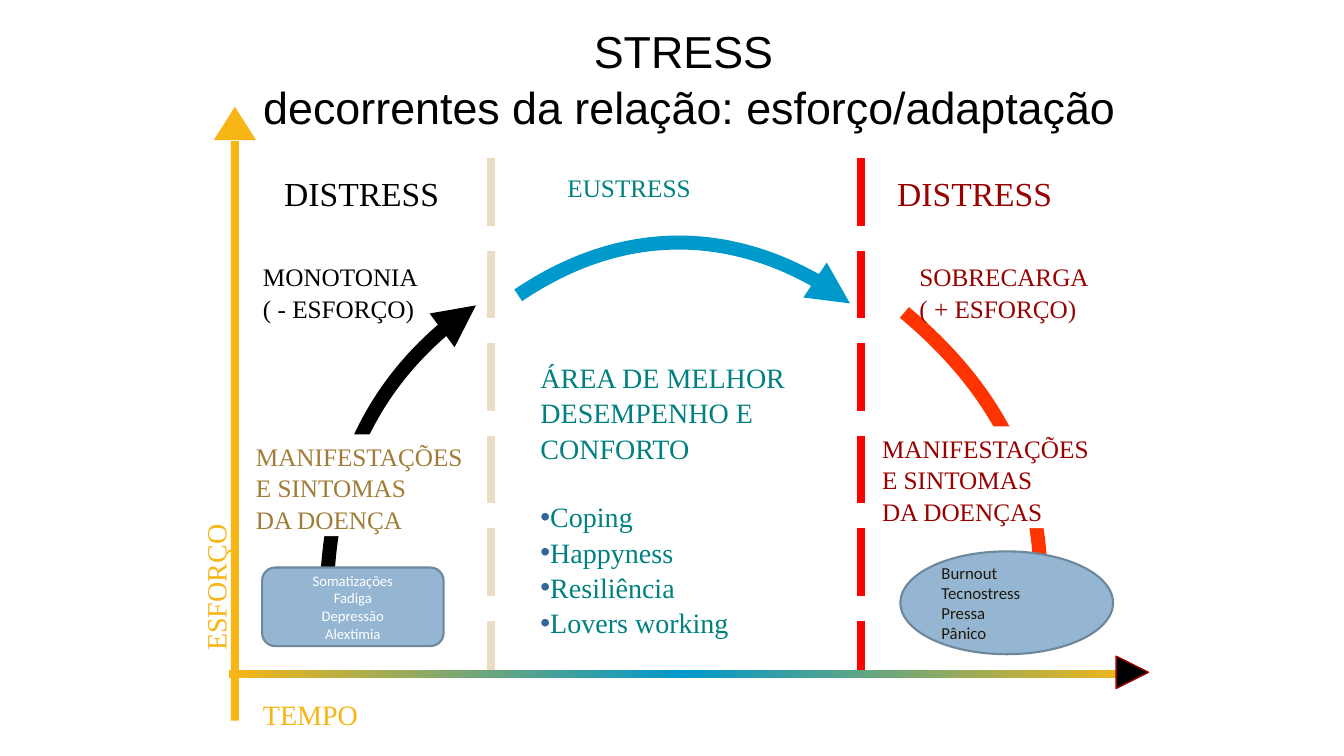
from copy import deepcopy

from lxml.etree import SubElement
from pptx import Presentation
from pptx.dml.color import RGBColor
from pptx.enum.dml import MSO_LINE
from pptx.enum.shapes import MSO_CONNECTOR, MSO_SHAPE
from pptx.enum.text import MSO_ANCHOR, MSO_AUTO_SIZE, PP_ALIGN
from pptx.oxml.ns import qn
from pptx.util import Inches, Pt

COLORS = {
    "black": "000000", "white": "FFFFFF", "dark red": "990000", "red": "FF0000",
    "orange": "FF3300", "teal": "008080", "blue": "0099CC", "sand": "EBDDC3",
    "brown": "A17C36", "amber": "F7B615", "bullet": "336699", "panel": "94B6D2",
    "panel line": "6D879B", "panel text": "20190B",
}
SERIF = "Times New Roman"


def rgb(name):
    return RGBColor.from_string(COLORS[name])


def write(shape, lines, font_name, size, color, align=PP_ALIGN.LEFT, spacing=1.05):
    """Fill a shape with one formatted paragraph per line."""
    frame = shape.text_frame
    frame.text = "\n".join(lines)
    paragraph_format = {"alignment": align, "line_spacing": spacing,
                        "space_before": Pt(0), "space_after": Pt(0)}
    font_format = {"name": font_name, "size": Pt(size)}
    for paragraph in frame.paragraphs:
        for attribute, value in paragraph_format.items():
            setattr(paragraph, attribute, value)
        for attribute, value in font_format.items():
            setattr(paragraph.font, attribute, value)
        paragraph.font.color.rgb = rgb(color)
    return frame


presentation = Presentation()
presentation.slide_width, presentation.slide_height = Inches(13.33), Inches(7.5)
slide = presentation.slides.add_slide(presentation.slide_layouts[1])
shapes = slide.shapes

# Title and list placeholders
title, body = slide.placeholders
for placeholder, box in ((title, (2.37, 0.36, 8.82, 0.81)), (body, (5.26, 3.51, 2.73, 2.8))):
    placeholder.left, placeholder.top, placeholder.width, placeholder.height = map(Inches, box)

frame = write(title, ["STRESS", " decorrentes da relação: esforço/adaptação"],
              "Arial", 32, "black", PP_ALIGN.CENTER)
frame.vertical_anchor = MSO_ANCHOR.MIDDLE
frame.auto_size = MSO_AUTO_SIZE.NONE
frame.word_wrap = False

heading = ["ÁREA DE MELHOR", "DESEMPENHO E", "CONFORTO"]
strategies = ["Coping", "Happyness", "Resiliência", "Lovers working"]
frame = write(body, heading + strategies, SERIF, 20, "teal")
frame.vertical_anchor = MSO_ANCHOR.TOP
frame.auto_size = MSO_AUTO_SIZE.NONE
frame.word_wrap = True
frame.paragraphs[len(heading)].space_before = Pt(24)
for index, paragraph in enumerate(frame.paragraphs):
    properties = paragraph._p.get_or_add_pPr()
    properties.set("marL", "0")
    properties.set("indent", "0")
    if index < len(heading):
        SubElement(properties, qn("a:buNone"))
    else:
        bullet_color = SubElement(properties, qn("a:buClr"))
        SubElement(bullet_color, qn("a:srgbClr")).set("val", COLORS["bullet"])
        SubElement(properties, qn("a:buChar")).set("char", "•")
    # Default run properties close the paragraph properties
    properties.append(properties.find(qn("a:defRPr")))

# Curved arrows: start, two control points, end
arrows = [
    ("black", [(3.24, 5.99), (3.24, 4.74), (3.82, 3.59), (4.72, 3.03)]),
    ("blue", [(5.14, 2.93), (6.16, 2.24), (7.49, 2.27), (8.43, 3.01)]),
    ("orange", [(8.97, 3.1), (9.94, 3.91), (10.45, 5.09), (10.29, 6.14)]),
]
for color, points in arrows:
    start, *rest = [(Inches(x), Inches(y)) for x, y in points]
    builder = shapes.build_freeform(*start)
    builder.add_line_segments(rest, close=False)
    arrow = builder.convert_to_shape()
    arrow.shadow.inherit = False
    arrow.fill.background()
    arrow.line.color.rgb = rgb(color)
    arrow.line.width = Pt(10)
    SubElement(arrow.line._get_or_add_ln(), qn("a:tailEnd")).set("type", "triangle")
    outline = arrow._element.spPr.find(".//" + qn("a:path"))
    curve = SubElement(outline, qn("a:cubicBezTo"))
    for segment in outline.findall(qn("a:lnTo")):
        curve.append(segment[0])
        outline.remove(segment)

# Dashed borders between the zones
for x, color in ((4.87, "sand"), (8.54, "red")):
    border = shapes.add_connector(MSO_CONNECTOR.STRAIGHT, Inches(x), Inches(1.57),
                                  Inches(x), Inches(6.65))
    border.line.color.rgb = rgb(color)
    border.line.width = Pt(6)
    border.line.dash_style = MSO_LINE.LONG_DASH
    SubElement(border._element.spPr, qn("a:effectLst"))

# Axes and their arrowheads
axis_parts = [
    (MSO_SHAPE.RECTANGLE, (2.27, 6.65, 9.02, 0.08), 0, "amber"),
    (MSO_SHAPE.RECTANGLE, (2.29, 1.4, 0.08, 5.75), 0, "amber"),
    (MSO_SHAPE.ISOSCELES_TRIANGLE, (2.12, 1.06, 0.42, 0.33), 0, "amber"),
    (MSO_SHAPE.ISOSCELES_TRIANGLE, (11.07, 6.51, 0.32, 0.32), 90, "black"),
]
axis_shapes = []
for kind, box, rotation, color in axis_parts:
    shape = shapes.add_shape(kind, *map(Inches, box))
    shape.shadow.inherit = False
    shape.rotation = rotation
    shape.fill.solid()
    shape.fill.fore_color.rgb = rgb(color)
    shape.line.fill.background()
    axis_shapes.append(shape)

time_axis, time_head = axis_shapes[0], axis_shapes[-1]
time_head.line.color.rgb = rgb("dark red")
time_head.line.width = Pt(1)
time_axis.fill.gradient()
time_axis.fill.gradient_angle = 0
stop_list = time_axis._element.spPr.find(".//" + qn("a:gsLst"))
stop_list.append(deepcopy(stop_list[0]))
for stop, position, color in zip(time_axis.fill.gradient_stops, (0, 0.5, 1),
                                 ("amber", "blue", "amber")):
    stop.position = position
    stop.color.rgb = rgb(color)

# Labels: lines, box, size, color, white background, rotation
labels = [
    (["DISTRESS"], (2.72, 1.65, 1.76, 0.51), 24, "black", False, 0),
    (["DISTRESS"], (8.8, 1.65, 1.76, 0.51), 24, "dark red", False, 0),
    (["EUSTRESS"], (5.53, 1.65, 1.44, 0.4), 18, "teal", False, 0),
    (["MONOTONIA", "( - ESFORÇO)"], (2.51, 2.53, 1.74, 0.7), 18, "black", False, 0),
    (["MANIFESTAÇÕES", "E SINTOMAS", "DA DOENÇA"], (2.44, 4.31, 2.27, 1.01), 18,
     "brown", True, 0),
    (["MANIFESTAÇÕES", "E SINTOMAS", "DA DOENÇAS"], (8.65, 4.23, 2.27, 1.01), 18,
     "dark red", True, 0),
    (["SOBRECARGA", "( + ESFORÇO)"], (9.02, 2.53, 1.9, 0.71), 18, "dark red", False, 0),
    (["TEMPO"], (2.51, 6.85, 1.16, 0.44), 20, "amber", True, 0),
    (["ESFORÇO"], (1.39, 5.6, 1.47, 0.44), 20, "amber", False, 270),
]
for lines, box, size, color, has_background, rotation in labels:
    label = shapes.add_textbox(*map(Inches, box))
    label.rotation = rotation
    if has_background:
        label.fill.solid()
        label.fill.fore_color.rgb = rgb("white")
    frame = write(label, lines, SERIF, size, color)
    frame.word_wrap = False
    frame.auto_size = MSO_AUTO_SIZE.SHAPE_TO_FIT_TEXT

# Symptom panels
panels = [
    (MSO_SHAPE.ROUNDED_RECTANGLE, (2.6, 5.63, 1.8, 0.78), 10.5, "white", PP_ALIGN.CENTER,
     ["Somatizações", "Fadiga", "Depressão", "Alextimia"]),
    (MSO_SHAPE.OVAL, (8.93, 5.47, 2.11, 1.02), 12, "panel text", PP_ALIGN.LEFT,
     ["Burnout", "Tecnostress", "Pressa", "Pânico"]),
]
for kind, box, size, color, align, lines in panels:
    panel = shapes.add_shape(kind, *map(Inches, box))
    panel.shadow.inherit = False
    panel.fill.solid()
    panel.fill.fore_color.rgb = rgb("panel")
    panel.line.color.rgb = rgb("panel line")
    panel.line.width = Pt(1.5)
    frame = write(panel, lines, "Calibri", size, color, align, 1.0)
    frame.vertical_anchor = MSO_ANCHOR.MIDDLE

presentation.save("out.pptx")
